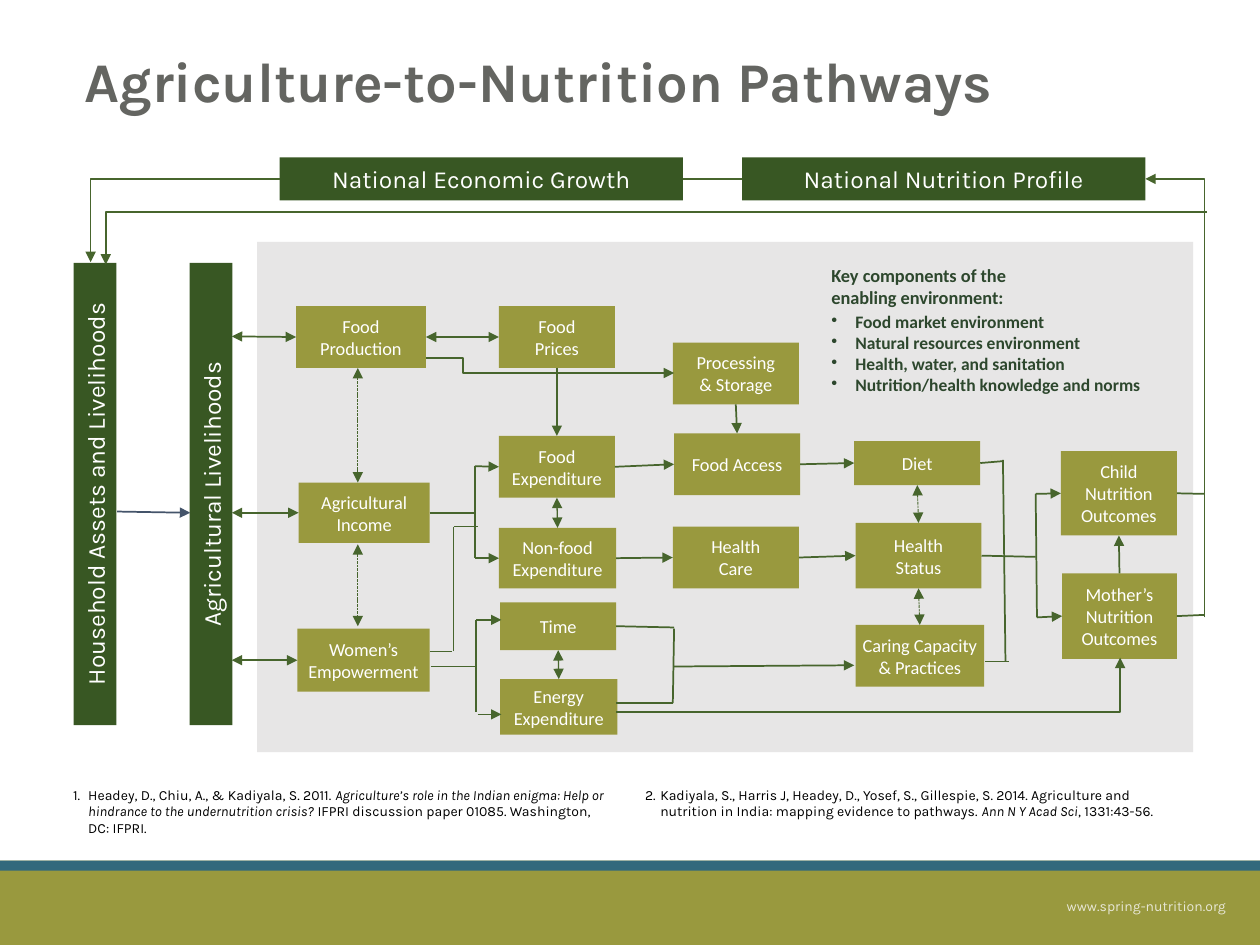
from pptx import Presentation
from pptx.dml.color import RGBColor
from pptx.enum.dml import MSO_LINE_DASH_STYLE as DASH
from pptx.enum.shapes import MSO_CONNECTOR as CONN, MSO_SHAPE
from pptx.enum.text import MSO_ANCHOR as ANCHOR, PP_ALIGN as ALIGN
from pptx.oxml.ns import qn
from pptx.util import Inches, Pt
from lxml.etree import SubElement

WHITE, BLACK = RGBColor(255, 255, 255), RGBColor(0, 0, 0)
OLIVE, BLUE = RGBColor(0x99, 0x99, 0x3E), RGBColor(0x32, 0x69, 0x7C)
PANEL, FOREST = RGBColor(0xE7, 0xE6, 0xE6), RGBColor(0x38, 0x57, 0x23)
LINE, SLATE = RGBColor(0x47, 0x65, 0x2D), RGBColor(0x44, 0x54, 0x6A)
KEY, TITLE = RGBColor(0x2D, 0x47, 0x2D), RGBColor(0x64, 0x65, 0x61)
CREAM = RGBColor(0xF6, 0xF5, 0xF0)
LEFT, BOTTOM, RIGHT, TOP = 1, 2, 3, 0

# Boxes of the pathway diagram: left, top, width, height, text
NODES = {
    "production": (2.35, 2.43, 1.03, 0.49, "Food Production"),
    "prices": (3.96, 2.43, 0.92, 0.49, "Food\nPrices"),
    "processing": (5.34, 2.72, 1, 0.49, "Processing\n& Storage"),
    "food_exp": (3.96, 3.46, 0.92, 0.49, "Food Expenditure"),
    "access": (5.35, 3.44, 1, 0.49, "Food Access"),
    "diet": (6.78, 3.5, 1, 0.35, "Diet"),
    "child": (8.42, 3.58, 0.92, 0.67, "Child Nutrition Outcomes"),
    "income": (2.37, 3.83, 1.04, 0.48, "Agricultural Income"),
    "nonfood": (3.96, 4.19, 0.93, 0.48, "Non-food Expenditure"),
    "care": (5.34, 4.18, 1, 0.49, "Health\nCare"),
    "status": (6.79, 4.15, 1, 0.52, "Health\nStatus"),
    "mother": (8.43, 4.55, 0.91, 0.68, "Mother’s Nutrition Outcomes"),
    "women": (2.36, 4.99, 1.05, 0.5, "Women’s Empowerment"),
    "time": (3.97, 4.78, 0.92, 0.38, "Time"),
    "energy": (3.97, 5.39, 0.93, 0.44, "Energy Expenditure"),
    "caring": (6.79, 4.96, 1.02, 0.49, "Caring Capacity & Practices"),
}

# Straight lines; an end is a point or a (box, side)
PLAIN = [
    (("income", RIGHT), (3.77, 4.07)), ((3.77, 3.7), (3.77, 4.43)),
    (("status", RIGHT), (8.22, 4.42)), ((8.22, 3.92), (8.23, 4.9)),
    (("diet", RIGHT), (7.96, 3.66)), ((7.96, 3.65), (7.98, 5.25)),
    ((7.82, 5.25), (8.01, 5.25)), ((3.42, 5.29), (3.78, 5.29)),
    ((3.78, 4.92), (3.78, 5.65)), (("time", RIGHT), (5.35, 4.98)),
    ((4.89, 5.58), (5.34, 5.58)), ((5.35, 4.99), (5.34, 5.58)),
    (("child", RIGHT), (9.56, 3.92)), (("mother", RIGHT), (9.56, 4.88)),
    (("growth", RIGHT), ("profile", LEFT)),
]
ONE_WAY = [
    (("prices", BOTTOM), ("food_exp", TOP)),
    (("processing", BOTTOM), ("access", TOP)),
    (("food_exp", RIGHT), ("access", LEFT)),
    (("nonfood", RIGHT), ("care", LEFT)),
    (("access", RIGHT), ("diet", LEFT)), (("care", RIGHT), ("status", LEFT)),
    (("mother", TOP), ("child", BOTTOM)),
    ((3.77, 3.7), ("food_exp", LEFT)), ((3.77, 4.43), ("nonfood", LEFT)),
    ((3.78, 4.92), (3.98, 4.92)), ((3.79, 5.67), (3.98, 5.67)),
    ((8.22, 3.92), ("child", LEFT)), ((8.23, 4.9), ("mother", LEFT)),
    ((5.35, 5.29), (6.78, 5.28)),
]
TWO_WAY = [
    (("production", RIGHT), ("prices", LEFT)),
    ((1.84, 2.67), ("production", LEFT)), ((1.84, 4.07), ("income", LEFT)),
    ((1.84, 5.24), ("women", LEFT)),
]
TWO_WAY_THIN = [(("nonfood", TOP), ("food_exp", BOTTOM)),
                (("energy", TOP), ("time", BOTTOM))]
DASHED = [
    (("diet", BOTTOM), ("status", TOP)), (("status", BOTTOM), ("caring", TOP)),
    ((2.84, 4.32), (2.84, 4.97)), ((2.84, 2.92), (2.84, 3.83)),
]
HAIRLINES = [((3.41, 5.17), (3.59, 5.17)), ((3.6, 5.17), (3.6, 4.18)),
             ((3.6, 4.18), (3.79, 4.18))]
# Elbow arrows: from, to, share of the width where the line turns
ELBOWS = [
    ((2.22, 1.42), (0.72, 2.08), 1), ((9.58, 1.68), (0.84, 2.1), 1),
    ((3.38, 2.84), (5.35, 2.96), 0.15), ((9.56, 4.9), (9.09, 1.42), 0),
    ((4.89, 5.65), (8.89, 5.22), 1),
]


def add_run(p, text, size, color, font="Calibri", bold=None, italic=None):
    r = p.add_run()
    r.text = text
    r.font.name, r.font.size = font, Pt(size)
    r.font.bold, r.font.italic = bold, italic
    r.font.color.rgb = color
    return r


def set_frame(sp, insets, anchor=ANCHOR.MIDDLE):
    tf = sp.text_frame
    tf.word_wrap, tf.vertical_anchor = True, anchor
    tf.margin_left, tf.margin_top, tf.margin_right, tf.margin_bottom = map(Inches, insets)
    return tf


def add_text(slide, box, insets=(0.1, 0.05, 0.1, 0.05), anchor=ANCHOR.MIDDLE):
    return set_frame(slide.shapes.add_textbox(*map(Inches, box)), insets, anchor)


def add_rect(slide, box, fill, text="", size=10.5, font="Calibri"):
    sp = slide.shapes.add_shape(MSO_SHAPE.RECTANGLE, *map(Inches, box))
    sp.shadow.inherit = False
    sp.fill.solid()
    sp.fill.fore_color.rgb = fill
    sp.line.fill.background()
    tf = set_frame(sp, (0.05,) * 4)
    for i, line in enumerate(text.split("\n") if text else []):
        p = tf.add_paragraph() if i else tf.paragraphs[0]
        p.alignment = ALIGN.CENTER
        add_run(p, line, size, WHITE, font)
    return sp


def add_line(slide, shapes, start, end, heads=(), width=1, color=LINE, dash=None, bend=None):
    ends = [(0, 0) if isinstance(e[0], str) else e for e in (start, end)]
    kind = CONN.STRAIGHT if bend is None else CONN.ELBOW
    c = slide.shapes.add_connector(kind, *[Inches(v) for e in ends for v in e])
    for e, join in ((start, c.begin_connect), (end, c.end_connect)):
        if isinstance(e[0], str):
            join(shapes[e[0]], e[1])
    c.line.color.rgb, c.line.width = color, Pt(width)
    if dash:
        c.line.dash_style = dash
    ln = c.line._get_or_add_ln()
    for head in heads:
        SubElement(ln, qn(f"a:{head}"), type="triangle")
    SubElement(c._element.spPr, qn("a:effectLst"))
    if bend is not None:
        guides = c._element.spPr.find(qn("a:prstGeom")).get_or_add_avLst()
        SubElement(guides, qn("a:gd"), name="adj1", fmla=f"val {round(bend * 100000)}")


def set_bullet(p, tag, indent, **attrs):
    pPr = p._p.get_or_add_pPr()
    pPr.set("marL", str(Inches(indent)))
    pPr.set("indent", str(-Inches(indent)))
    SubElement(pPr, qn(tag), **attrs)


def add_footer(slide, left, top, width, height):
    add_rect(slide, (left, top, width, height), OLIVE)
    add_rect(slide, (left, top, width, 0.08), BLUE)
    p = add_text(slide, (left + width - 2.42, top + 0.24, 2.25, 0.24)).paragraphs[0]
    p.alignment = ALIGN.RIGHT
    r = add_run(p, "www.spring-nutrition.org", 8, CREAM, "Karla")
    SubElement(r._r.rPr.find(".//" + qn("a:srgbClr")), qn("a:alpha"), val="86000")


def add_title(slide, box):
    p = add_text(slide, box, (0, 0, 0, 0.05)).paragraphs[0]
    p.line_spacing = 0.9
    add_run(p, "Agriculture-to-Nutrition Pathways", 32, TITLE, "Karla", bold=True)


def add_key(slide, left, top):
    p = add_text(slide, (left, top, 1.73, 0.27)).paragraphs[0]
    add_run(p, "Key components of the enabling environment:", 10.5, KEY, bold=True)
    tf = add_text(slide, (left, top + 0.25, 2.89, 0.83))
    items = ["Food market environment", "Natural resources environment",
             "Health, water, and sanitation", "Nutrition/health knowledge and norms"]
    for i, item in enumerate(items):
        p = tf.add_paragraph() if i else tf.paragraphs[0]
        set_bullet(p, "a:buChar", 0.19, char="•")
        add_run(p, item, 10, KEY, bold=True)


def add_diagram(slide, panel):
    add_rect(slide, panel, PANEL)
    shapes = {name: add_rect(slide, (x, y, w, h), OLIVE, text)
              for name, (x, y, w, h, text) in NODES.items()}
    # National bars across the top, livelihood bars turned upright
    for name, x, text in (("growth", 2.22, "National Economic Growth"),
                          ("profile", 5.89, "National Nutrition Profile")):
        shapes[name] = add_rect(slide, (x, 1.25, 3.2, 0.34), FOREST, text, 14, "Karla")
    for x, text in ((-1.08, "Household Assets and Livelihoods"),
                    (-0.16, "Agricultural Livelihoods")):
        add_rect(slide, (x, 3.75, 3.67, 0.34), FOREST, text, 14, "Karla").rotation = 270
    # Connections
    both = ("headEnd", "tailEnd")
    for lines, heads, width, dash in (
            (PLAIN, (), 1, None), (ONE_WAY, both[1:], 1, None), (TWO_WAY, both, 1, None),
            (TWO_WAY_THIN, both, 0.75, None), (DASHED, both, 0.5, DASH.SQUARE_DOT),
            (HAIRLINES, (), 0.5, None)):
        for start, end in lines:
            add_line(slide, shapes, start, end, heads, width, dash=dash)
    for start, end, bend in ELBOWS:
        add_line(slide, shapes, start, end, both[1:], bend=bend)
    add_line(slide, shapes, (0.93, 4.06), (1.51, 4.07), both[1:], color=SLATE)


def add_references(slide, box):
    tf = set_frame(add_rect(slide, box, WHITE), (0, 0.05, 0, 0.05), ANCHOR.TOP)
    bodyPr = tf._txBody.bodyPr
    bodyPr.set("numCol", "2")
    bodyPr.set("spcCol", str(Inches(0.3)))
    references = [
        ("Headey, D., Chiu, A., & Kadiyala, S. 2011. ",
         "Agriculture’s role in the Indian enigma: Help or hindrance to the undernutrition crisis? ",
         "IFPRI discussion paper 01085. Washington, DC: IFPRI."),
        ("Kadiyala, S., Harris J, Headey, D., Yosef, S., Gillespie, S. 2014. Agriculture and "
         "nutrition in India: mapping evidence to pathways. ", "Ann N Y Acad Sci", ", 1331:43-56."),
    ]
    for i, parts in enumerate(references):
        p = tf.add_paragraph() if i else tf.paragraphs[0]
        p.alignment = ALIGN.LEFT
        set_bullet(p, "a:buAutoNum", 0.12, type="arabicPeriod")
        for part, italic in zip(parts, (False, True, False)):
            add_run(p, part, 8, BLACK, "Karla", italic=italic)


def main():
    prs = Presentation()
    prs.slide_width, prs.slide_height = Inches(10), Inches(7.5)
    slide = prs.slides.add_slide(prs.slide_layouts[6])
    add_footer(slide, 0, 6.83, 10, 0.67)
    add_title(slide, (0.67, 0.27, 8.52, 0.85))
    add_diagram(slide, (2.04, 1.92, 7.43, 4.05))
    add_key(slide, 6.5, 2.14)
    add_references(slide, (0.58, 6.19, 8.78, 0.54))
    prs.save("out.pptx")


if __name__ == "__main__":
    main()
